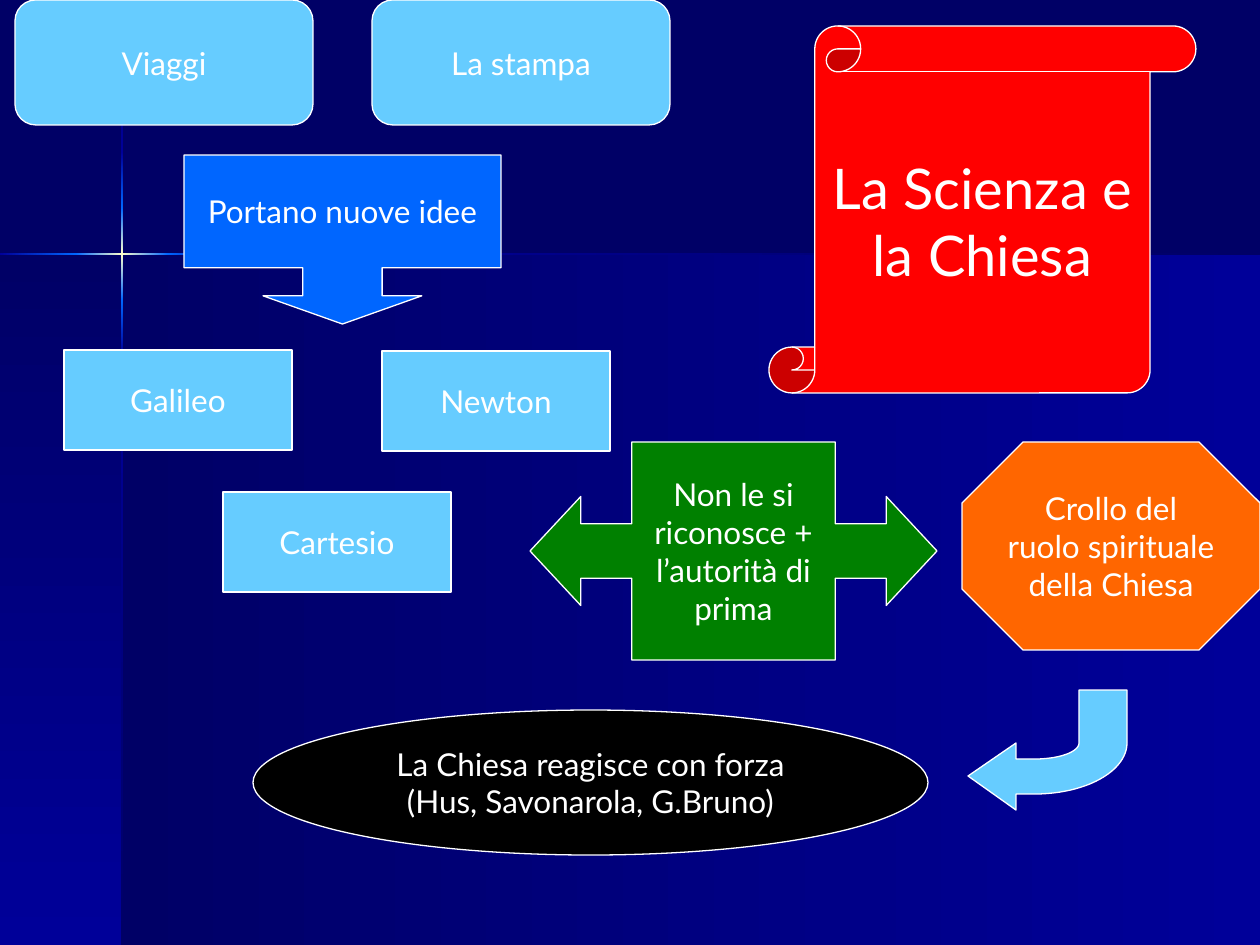
from collections import namedtuple
from itertools import pairwise
from math import cos, pi, sin

from pptx import Presentation
from pptx.dml.color import RGBColor
from pptx.enum.shapes import MSO_SHAPE
from pptx.enum.text import MSO_ANCHOR, PP_ALIGN
from pptx.util import Pt

RECT = MSO_SHAPE.RECTANGLE
ROUNDED = MSO_SHAPE.ROUNDED_RECTANGLE
DOWN_CALLOUT = MSO_SHAPE.DOWN_ARROW_CALLOUT
SIDE_CALLOUT = MSO_SHAPE.LEFT_RIGHT_ARROW_CALLOUT
OCTAGON = MSO_SHAPE.OCTAGON
ELLIPSE = MSO_SHAPE.OVAL
SCROLL = MSO_SHAPE.VERTICAL_SCROLL
CENTER = PP_ALIGN.CENTER
MIDDLE = MSO_ANCHOR.MIDDLE

NAVY = RGBColor(0x00, 0x00, 0x66)
INDIGO = RGBColor(0x00, 0x00, 0x99)
BLUE = RGBColor(0x00, 0x66, 0xFF)
CREAM = RGBColor(0xFF, 0xFF, 0xCC)
SKY = RGBColor(0x66, 0xCC, 0xFF)
GREEN = RGBColor(0x00, 0x80, 0x00)
ORANGE = RGBColor(0xFF, 0x66, 0x00)
RED = RGBColor(0xFF, 0x00, 0x00)
BLACK = RGBColor(0x00, 0x00, 0x00)
WHITE = RGBColor(0xFF, 0xFF, 0xFF)

FONT = "Lato"
SCALE = 914400 / 126
Box = namedtuple("Box", "left top width height")


def emu(px):
    """Turn px into EMU."""
    return round(px * SCALE)


def within(box, left, top, width, height):
    """Return a box whose position is counted from another box."""
    return Box(box.left + left, box.top + top, width, height)


def paint(shape, color):
    """Give a shape a plain fill and a thin white outline."""
    shape.shadow.inherit = False
    shape.fill.solid()
    shape.fill.fore_color.rgb = color
    shape.line.color.rgb = WHITE
    shape.line.width = Pt(0.75)


def add_label(page, text, box, *, kind=RECT, color=SKY, size=18, wrap=False, adjust=()):
    """Add a filled shape with centred text."""
    shape = page.shapes.add_shape(kind, *map(emu, box))
    paint(shape, color)
    for index, value in enumerate(adjust):
        shape.adjustments[index] = value
    frame = shape.text_frame
    frame.word_wrap = wrap
    frame.vertical_anchor = MIDDLE
    para = frame.paragraphs[0]
    para.alignment = CENTER
    span = para.add_run()
    span.text = text
    span.font.name = FONT
    span.font.size = Pt(size)
    span.font.color.rgb = WHITE


def add_fade(page, box, start, end, *, down=False):
    """Add a borderless rectangle that fades between two colours."""
    shape = page.shapes.add_shape(RECT, *map(emu, box))
    shape.shadow.inherit = False
    shape.line.fill.background()
    shape.fill.gradient()
    shape.fill.gradient_angle = 270 if down else 0
    for stop, color in zip(shape.fill.gradient_stops, (start, end)):
        stop.color.rgb = color


def add_backdrop(page, box):
    """Draw the faded panels and the glowing cross."""
    page.background.fill.solid()
    page.background.fill.fore_color.rgb = NAVY
    column, row, thick = 122, 254, 2
    low = box.height - row
    add_fade(page, within(box, column, row, box.width - column, low), NAVY, INDIGO)
    add_fade(page, within(box, 0, row, column, low), NAVY, INDIGO, down=True)
    upright = [(0, NAVY), (152, INDIGO), (208, BLUE), (254, CREAM),
               (300, BLUE), (355, INDIGO), (box.height, NAVY)]
    level = [(0, INDIGO), (76, BLUE), (122, CREAM), (168, BLUE),
             (223, INDIGO), (box.width, NAVY)]
    for (start, first), (end, last) in pairwise(upright):
        strip = within(box, column - 1, start, thick, end - start)
        add_fade(page, strip, first, last, down=True)
    for (start, first), (end, last) in pairwise(level):
        strip = within(box, start, row - 1, end - start, thick)
        add_fade(page, strip, first, last)


def add_ideas(page, box):
    """Place the two causes and the callout below them."""
    for column, text in enumerate(("Viaggi", "La stampa")):
        add_label(page, text, within(box, column * 357, 0, 298, 125),
                  kind=ROUNDED, adjust=[0.167])
    add_label(page, "Portano nuove idee", within(box, 169, 155, 317, 169),
              kind=DOWN_CALLOUT, color=BLUE, adjust=[0.47, 0.47, 0.167, 0.667])


def add_scientists(page, box):
    """Place the three scientists in a triangle."""
    for text, left, top in (("Galileo", 0, 0), ("Newton", 318, 1), ("Cartesio", 159, 142)):
        add_label(page, text, within(box, left, top, 228, 100))


def add_conflict(page, box):
    """Place the lost authority and the fall of the Church."""
    add_label(page, "Non le si riconosce + l’autorità di prima",
              within(box, 0, 0, 407, 218), kind=SIDE_CALLOUT, color=GREEN,
              wrap=True, adjust=[0.25, 0.25, 0.233, 0.5])
    add_label(page, "Crollo del ruolo spirituale della Chiesa",
              within(box, 432, 0, 298, 208), kind=OCTAGON, color=ORANGE,
              wrap=True, adjust=[0.293])


def arc(center_x, center_y, radius_x, radius_y, steps=24):
    """Return points of a quarter ellipse, from its bottom to its right."""
    angles = [pi / 2 * (1 - step / steps) for step in range(steps + 1)]
    return [(center_x + radius_x * cos(a), center_y + radius_y * sin(a)) for a in angles]


def add_curved_arrow(page, box):
    """Draw the arrow that bends down and to the left."""
    points = [(0, 86), (48, 120), (48, 104), *arc(67, 53, 92, 51), (159, 0), (111, 0),
              *reversed(arc(67, 53, 44, 16)), (48, 69), (48, 53)]
    spots = [(emu(box.left + x), emu(box.top + y)) for x, y in points]
    builder = page.shapes.build_freeform(*spots[0])
    builder.add_line_segments(spots[1:], close=True)
    paint(builder.convert_to_shape(), SKY)


def add_reaction(page, box):
    """Place the reaction of the Church and the arrow leading to it."""
    add_curved_arrow(page, within(box, 715, 0, 159, 120))
    add_label(page, "La Chiesa reagisce con forza (Hus, Savonarola, G.Bruno)",
              within(box, 0, 20, 675, 145), kind=ELLIPSE, color=BLACK, wrap=True)


def main():
    """Build the slide and save it."""
    deck = Presentation()
    deck.slide_width, deck.slide_height = emu(1260), emu(945)
    page = deck.slides.add_slide(deck.slide_layouts[6])
    add_backdrop(page, Box(0, 0, 1260, 945))
    add_ideas(page, Box(15, 0, 655, 324))
    add_scientists(page, Box(64, 350, 546, 242))
    add_conflict(page, Box(530, 442, 730, 218))
    add_reaction(page, Box(253, 690, 874, 165))
    add_label(page, "La Scienza e la Chiesa", Box(769, 26, 427, 367),
              kind=SCROLL, color=RED, size=32, wrap=True, adjust=[0.125])
    deck.save("out.pptx")


if __name__ == "__main__":
    main()
